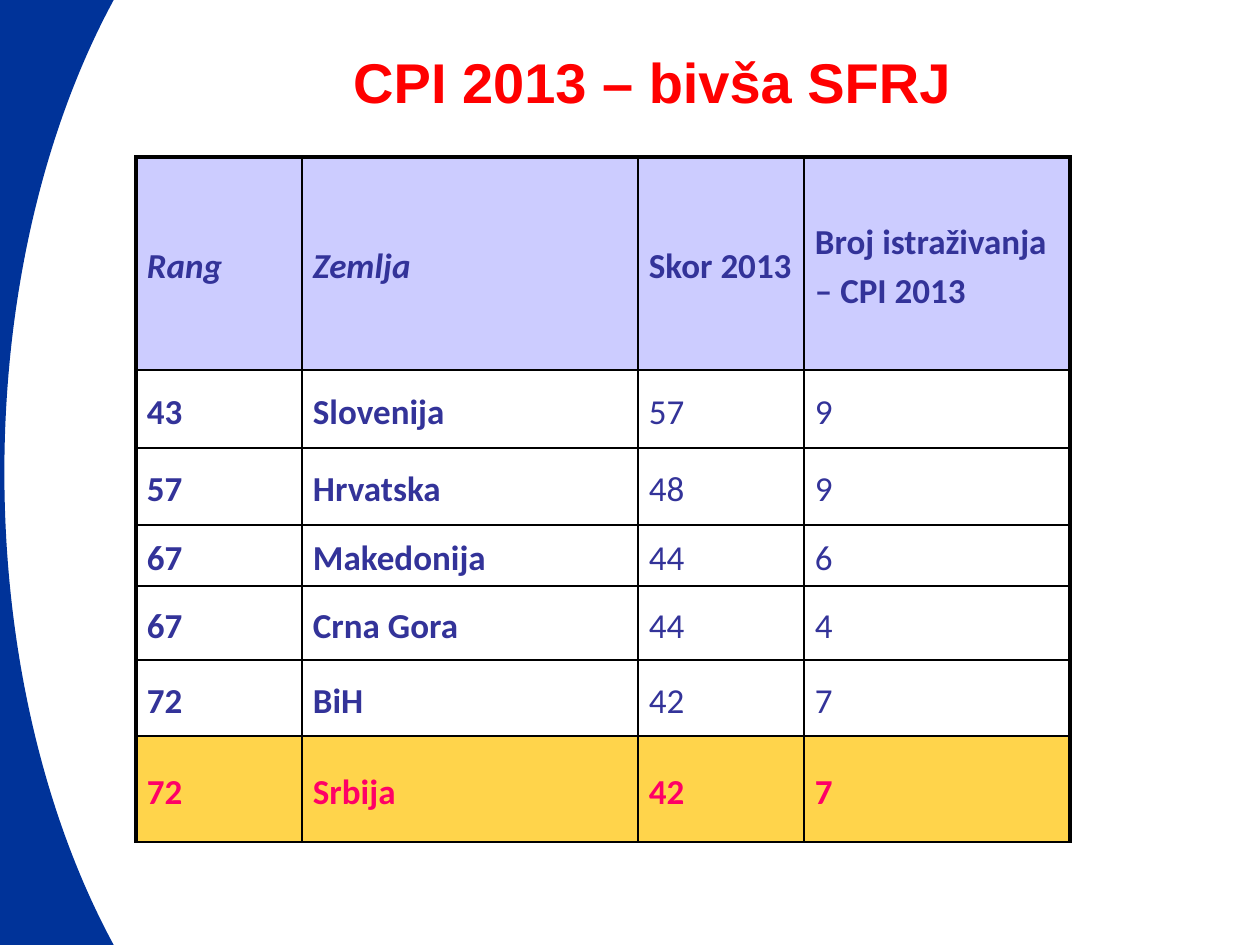
import pptx
import pptx.util
import pptx.dml.color
import pptx.enum.shapes
import pptx.enum.text
import pptx.oxml
import pptx.oxml.ns

SCALE = 914400 // 126
COLS = [166, 336, 166, 266]
ROWS = [213, 78, 77, 61, 74, 76, 106]
DATA = [
    ["Rang", "Zemlja", "Skor 2013", "Broj istraživanja – CPI 2013"],
    ["43", "Slovenija", "57", "9"],
    ["57", "Hrvatska", "48", "9"],
    ["67", "Makedonija", "44", "6"],
    ["67", "Crna Gora", "44", "4"],
    ["72", "BiH", "42", "7"],
    ["72", "Srbija", "42", "7"],
]


def px(n):
    return pptx.util.Emu(n * SCALE)


def color(code):
    return pptx.dml.color.RGBColor.from_string(code)


def style(run, face, size, code, bold, slant=False):
    font = run.font
    font.name = face
    font.size = pptx.util.Pt(size)
    font.bold = bold
    font.italic = slant
    font.color.rgb = color(code)


def add_moon(slide):
    kind = pptx.enum.shapes.MSO_SHAPE.MOON
    moon = slide.shapes.add_shape(kind, px(-168), px(-84), px(336), px(1113))
    moon.adjustments[0] = 0.513
    moon.shadow.inherit = False
    moon.fill.solid()
    moon.fill.fore_color.rgb = color("003399")
    moon.line.fill.background()
    moon.element.getparent().insert(2, moon.element)


def set_title(slide, text):
    title = slide.shapes.title
    title.left, title.top = px(84), px(35)
    title.width, title.height = px(1137), px(100)
    frame = title.text_frame
    frame.text = text
    frame.word_wrap = True
    frame.vertical_anchor = pptx.enum.text.MSO_ANCHOR.TOP
    para = frame.paragraphs[0]
    para.alignment = pptx.enum.text.PP_ALIGN.CENTER
    para.line_spacing = pptx.util.Pt(42)
    style(para.runs[0], "Arial", 32, "FF0000", True)


def set_edge(cell, side, width):
    space = pptx.oxml.ns.nsdecls("a")
    edge = pptx.oxml.parse_xml(
        f'<a:ln{side} {space} w="{pptx.util.Pt(width)}"><a:solidFill>'
        f'<a:srgbClr val="000000"/></a:solidFill></a:ln{side}>'
    )
    cell._tc.get_or_add_tcPr().append(edge)


def fill_cell(cell, row, col):
    head, last = row == 0, row == len(ROWS) - 1
    thick = {"L": col == 0, "R": col == len(COLS) - 1, "T": head, "B": False}
    for side, heavy in thick.items():
        set_edge(cell, side, 2.25 if heavy else 1)
    if head or last:
        cell.fill.solid()
        cell.fill.fore_color.rgb = color("CCCCFF" if head else "FFD44B")
    else:
        cell.fill.background()
    cell.margin_left = cell.margin_right = px(11)
    cell.margin_top = cell.margin_bottom = px(6)
    cell.vertical_anchor = pptx.enum.text.MSO_ANCHOR.MIDDLE
    cell.text_frame.text = DATA[row][col]
    para = cell.text_frame.paragraphs[0]
    para.line_spacing = 1.15
    para.space_after = pptx.util.Pt(10)
    bold = head or last or col < 2
    ink = "FF0066" if last else "333399"
    style(para.runs[0], "Calibri", 20, ink, bold, head and col < 2)


def add_grid(slide):
    frame = slide.shapes.add_table(
        len(ROWS), len(COLS), px(136), px(157), px(sum(COLS)), px(sum(ROWS))
    )
    table = frame.table
    table.first_row = table.horz_banding = False
    for col, width in enumerate(COLS):
        table.columns[col].width = px(width)
    for row, height in enumerate(ROWS):
        table.rows[row].height = px(height)
        for col in range(len(COLS)):
            fill_cell(table.cell(row, col), row, col)


def main():
    deck = pptx.Presentation()
    deck.slide_width, deck.slide_height = px(1260), px(945)
    slide = deck.slides.add_slide(deck.slide_layouts[5])
    add_moon(slide)
    set_title(slide, "CPI 2013 – bivša SFRJ")
    add_grid(slide)
    deck.save("out.pptx")


if __name__ == "__main__":
    main()
